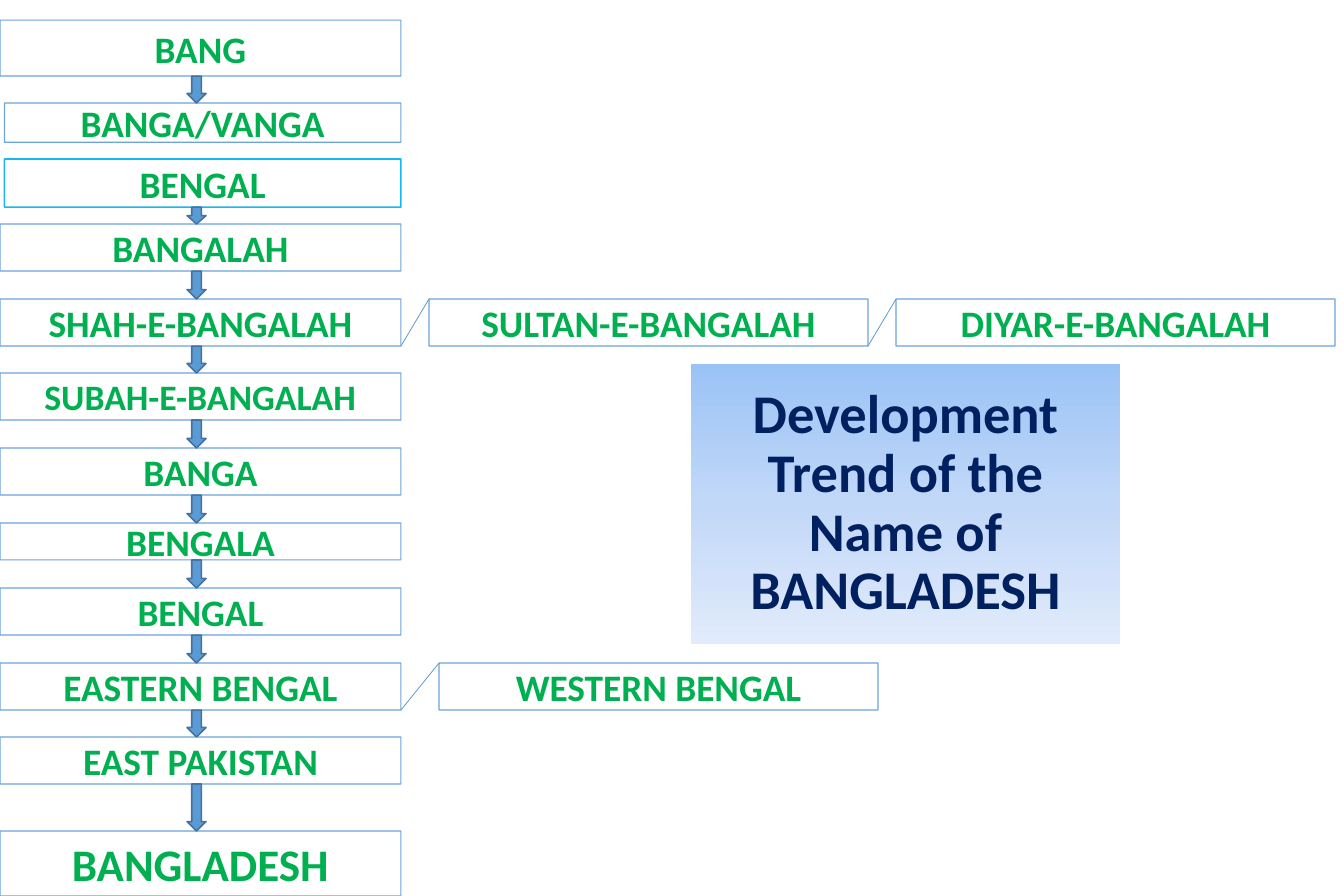
import copy

import pptx
import pptx.dml.color
import pptx.enum.shapes
import pptx.enum.text
import pptx.oxml
import pptx.oxml.ns
import pptx.util

Inches = pptx.util.Inches
Pt = pptx.util.Pt
SHAPES = pptx.enum.shapes.MSO_SHAPE

BLUE = "5B9BD5"
COLUMN_RIGHT = 3.58
ROW_HEIGHT = 0.42
SIDE_WIDTH = 3.92
ARROW_LEFT, ARROW_WIDTH = 1.67, 0.17

# Names in order of time: text, left, top, height, text size
NAMES = [
    ("BANG", 0, 0.18, 0.5, 24),
    ("BANGA/VANGA", 0.04, 0.92, 0.35, 24),
    ("BENGAL", 0.04, 1.42, 0.43, 24),
    ("BANGALAH", 0, 2, ROW_HEIGHT, 24),
    ("SHAH-E-BANGALAH", 0, 2.67, ROW_HEIGHT, 24),
    ("SUBAH-E-BANGALAH", 0, 3.33, ROW_HEIGHT, 23),
    ("BANGA", 0, 4, ROW_HEIGHT, 24),
    ("BENGALA", 0, 4.67, 0.33, 24),
    ("BENGAL", 0, 5.25, ROW_HEIGHT, 24),
    ("EASTERN BENGAL", 0, 5.92, ROW_HEIGHT, 24),
    ("EAST PAKISTAN", 0, 6.58, ROW_HEIGHT, 24),
    ("BANGLADESH", 0, 7.42, 0.58, 29),
]
UNLINKED = 1  # no arrow leaves BANGA/VANGA
OUTLINED = 2  # the upper BENGAL has its own outline

# Names used side by side: text, left, top, right edge of the box before
SIDE_NAMES = [
    ("SULTAN-E-BANGALAH", 3.83, 2.67, COLUMN_RIGHT),
    ("DIYAR-E-BANGALAH", 8, 2.67, 3.83 + SIDE_WIDTH),
    ("WESTERN BENGAL", 3.92, 5.92, COLUMN_RIGHT),
]


def rgb(hex_colour):
    return pptx.dml.color.RGBColor.from_string(hex_colour)


def set_text(frame, text, size, colour):
    frame.text = text
    frame.word_wrap = True
    frame.vertical_anchor = pptx.enum.text.MSO_ANCHOR.MIDDLE
    paragraph = frame.paragraphs[0]
    paragraph.alignment = pptx.enum.text.PP_ALIGN.CENTER
    font = paragraph.runs[0].font
    font.name, font.size, font.bold = "Calibri", Pt(size), True
    font.color.rgb = rgb(colour)


def add_outlined(slide, kind, left, top, width, height, line, points):
    shape = slide.shapes.add_shape(
        kind, Inches(left), Inches(top), Inches(width), Inches(height))
    shape.shadow.inherit = False
    shape.line.color.rgb = rgb(line)
    shape.line.width = Pt(points)
    return shape


def add_name(slide, text, left, top, width, height, size=24):
    box = add_outlined(slide, SHAPES.RECTANGLE, left, top, width, height, BLUE, 0.75)
    box.fill.background()
    line_colour = box.line._ln.find(".//" + pptx.oxml.ns.qn("a:srgbClr"))
    line_colour.append(pptx.oxml.parse_xml(
        f'<a:alpha {pptx.oxml.ns.nsdecls("a")} val="90000"/>'))
    frame = box.text_frame
    frame.margin_left = frame.margin_right = Inches(0.11)
    frame.margin_top = frame.margin_bottom = Inches(0.06)
    set_text(frame, text, size, "00B050")
    return box


def add_arrow(slide, top, bottom):
    arrow = add_outlined(slide, SHAPES.DOWN_ARROW, ARROW_LEFT, top,
                         ARROW_WIDTH, bottom - top, "43739E", 1)
    arrow.fill.solid()
    arrow.fill.fore_color.rgb = rgb(BLUE)


def add_slanted_line(slide, left, bottom, right, top):
    link = slide.shapes.add_connector(
        pptx.enum.shapes.MSO_CONNECTOR.STRAIGHT,
        Inches(left), Inches(bottom), Inches(right), Inches(top))
    link.line.color.rgb = rgb(BLUE)
    link.line.width = Pt(0.5)
    link._element.spPr.append(pptx.oxml.parse_xml(
        f'<a:effectLst {pptx.oxml.ns.nsdecls("a")}/>'))


def format_title(title):
    title.left, title.top = Inches(6.17), Inches(3.25)
    title.width, title.height = Inches(3.83), Inches(2.5)
    set_text(title.text_frame, "Development Trend of the Name of BANGLADESH",
             35, "002060")
    title.text_frame.paragraphs[0].line_spacing = 0.9
    title.text_frame.auto_size = pptx.enum.text.MSO_AUTO_SIZE.NONE
    # Three-stop gradient running downwards
    title.fill.gradient()
    title.fill.gradient_angle = 270
    first_stop = title._element.spPr.find(".//" + pptx.oxml.ns.qn("a:gs"))
    middle_stop = copy.deepcopy(first_stop)
    first_stop.addnext(middle_stop)
    stops = zip(title.fill.gradient_stops, ("9AC3F5", "C2D8F8", "E1EBFB"), (0, 0.5, 1))
    for stop, colour, position in stops:
        stop.color.rgb = rgb(colour)
        stop.position = position


def main():
    presentation = pptx.Presentation()
    presentation.slide_width, presentation.slide_height = Inches(12), Inches(8)
    slide = presentation.slides.add_slide(presentation.slide_layouts[5])
    format_title(slide.shapes.title)

    # Column of names
    for index, (text, left, top, height, size) in enumerate(NAMES):
        box = add_name(slide, text, left, top, COLUMN_RIGHT - left, height, size)
        if index == OUTLINED:
            box.fill.solid()
            box.fill.fore_color.rgb = rgb("FFFFFF")
            box.line.color.rgb = rgb("00B0F0")
            box.line.width = Pt(1)

    # Arrows filling the gaps between the names
    for index, (upper, lower) in enumerate(zip(NAMES, NAMES[1:])):
        if index != UNLINKED:
            add_arrow(slide, upper[2] + upper[3], lower[2])

    # Names alongside, each tied to the box before it
    for text, left, top, previous_right in SIDE_NAMES:
        add_name(slide, text, left, top, SIDE_WIDTH, ROW_HEIGHT)
        add_slanted_line(slide, previous_right, top + ROW_HEIGHT, left, top)

    presentation.save("out.pptx")


if __name__ == "__main__":
    main()
